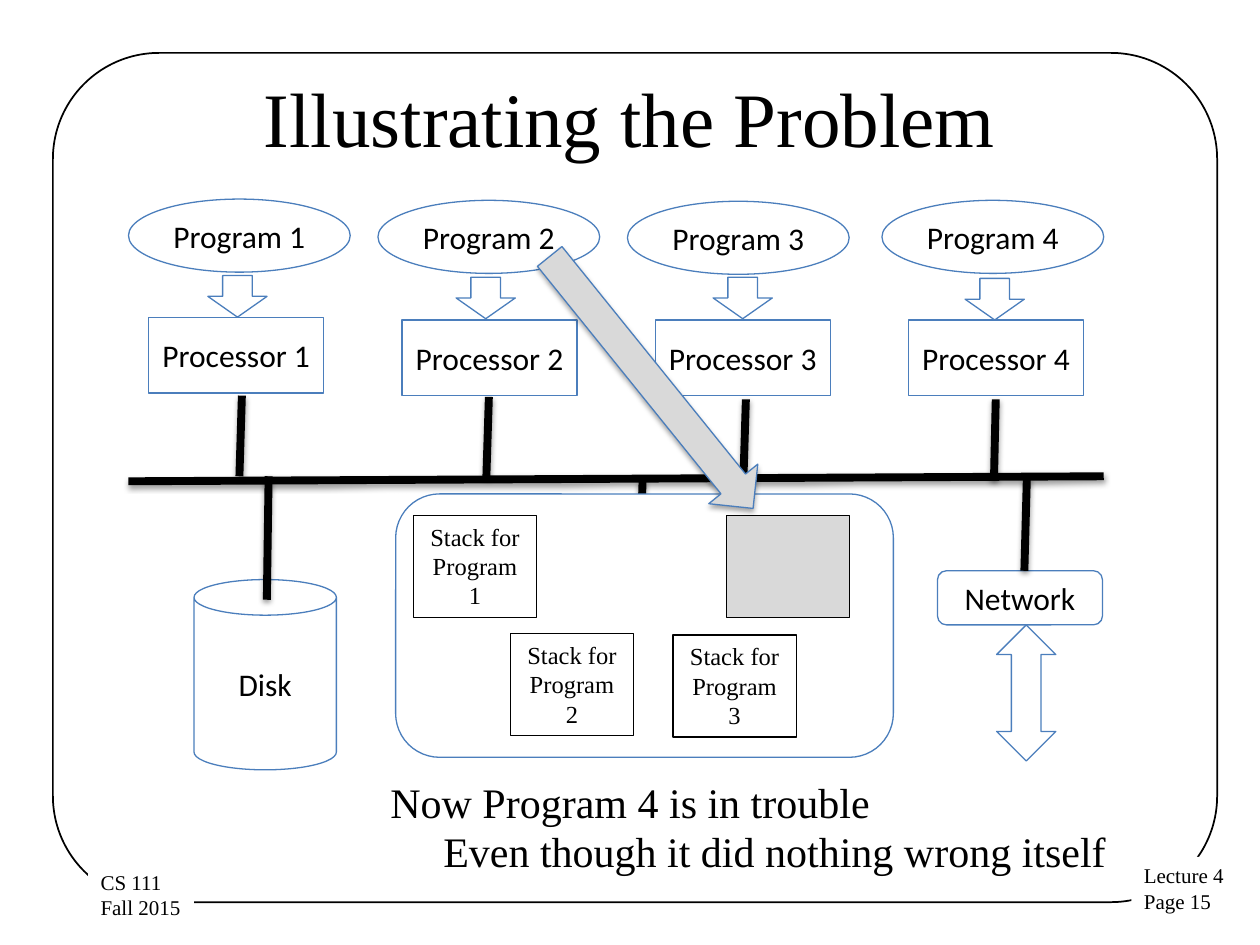
from dataclasses import dataclass

from lxml import etree
from pptx import Presentation
from pptx.dml.color import RGBColor
from pptx.enum.shapes import MSO_CONNECTOR, MSO_SHAPE
from pptx.enum.text import MSO_ANCHOR, PP_ALIGN
from pptx.oxml.ns import qn
from pptx.util import Pt

RECTANGLE = MSO_SHAPE.RECTANGLE
ROUNDED = MSO_SHAPE.ROUNDED_RECTANGLE
OVAL = MSO_SHAPE.OVAL
CAN = MSO_SHAPE.CAN
DOWN_ARROW = MSO_SHAPE.DOWN_ARROW
UP_DOWN_ARROW = MSO_SHAPE.UP_DOWN_ARROW
STRAIGHT = MSO_CONNECTOR.STRAIGHT
LEFT, CENTER = PP_ALIGN.LEFT, PP_ALIGN.CENTER
TOP, MIDDLE = MSO_ANCHOR.TOP, MSO_ANCHOR.MIDDLE

COLORS = {"ink": "000000", "paper": "FFFFFF", "outline": "4B7EBC", "intruder": "D9D9D9"}
SERIF, SANS = "Times New Roman", "Calibri"


@dataclass(frozen=True)
class Box:
    left: float
    top: float
    width: float
    height: float


@dataclass(frozen=True)
class TextStyle:
    font: str
    size: float
    align: PP_ALIGN = CENTER
    anchor: MSO_ANCHOR = MIDDLE
    wrap: bool = False


@dataclass(frozen=True)
class Column:
    program: tuple[float, float]
    arrow: tuple[float, float]
    processor_top: float


@dataclass(frozen=True)
class Wire:
    start: tuple[float, float]
    end: tuple[float, float]


LABEL = TextStyle(SANS, 18)
STACK = TextStyle(SERIF, 14, anchor=TOP, wrap=True)
TITLE = TextStyle(SERIF, 44, wrap=True)
CORNER = TextStyle(SERIF, 12, LEFT, TOP)
REMARK = TextStyle(SERIF, 24, LEFT, TOP)

COLUMNS = [
    Column((73.44, 113.76), (118.8, 157.5), 181.44),
    Column((216, 114.48), (260.64, 158.4), 182.88),
    Column((358.56, 115), (407.52, 158.4), 182.88),
    Column((504, 114.48), (551.52, 159.12), 182.88),
]
PROCESSOR_LEFT, PROCESSOR_STEP = 84.96, 144.72

WIRES = [
    Wire((73.44, 275.04), (630.72, 272.16)),
    Wire((136.8, 272.16), (138.24, 226.08)),
    Wire((277.92, 272.88), (279.36, 226.8)),
    Wire((424.8, 274.32), (426.24, 228.24)),
    Wire((568, 274.32), (569, 228.24)),
    Wire((365.76, 319.68), (367.2, 274.32)),
    Wire((152.5, 342.72), (153.5, 272.16)),
    Wire((585.36, 326.16), (586.8, 272.88)),
]

STACK_WIDTH, STACK_HEIGHT = 70.56, 58.32
STACKS = [(236.16, 294.48), (291.6, 362.16), (384.48, 362.88)]


def color(name: str) -> RGBColor:
    return RGBColor.from_string(COLORS[name])


def write(shape, lines: list[str], style: TextStyle) -> None:
    frame = shape.text_frame
    frame.word_wrap = style.wrap
    frame.vertical_anchor = style.anchor
    frame.text = "\n".join(lines)
    for para in frame.paragraphs:
        para.alignment = style.align
        para.font.name = style.font
        para.font.size = Pt(style.size)
        para.font.color.rgb = color("ink")


def add_text(page, box: Box, text: str, style: TextStyle) -> None:
    text_box = page.shapes.add_textbox(
        Pt(box.left), Pt(box.top), Pt(box.width), Pt(box.height))
    write(text_box, [text], style)


def add_block(page, kind, box: Box, fill: str | None = None,
              line: str | None = "outline", line_width: float = 0.75,
              lines: list[str] | None = None, style: TextStyle = LABEL):
    shape = page.shapes.add_shape(
        kind, Pt(box.left), Pt(box.top), Pt(box.width), Pt(box.height))
    shape.shadow.inherit = False
    if fill:
        shape.fill.solid()
        shape.fill.fore_color.rgb = color(fill)
    else:
        shape.fill.background()
    if line:
        shape.line.color.rgb = color(line)
        shape.line.width = Pt(line_width)
    else:
        shape.line.fill.background()
    if lines:
        write(shape, lines, style)
    return shape


def cast_shadow(shape, distance: float, opacity: int) -> None:
    properties = shape._element.spPr
    effects = properties.find(qn("a:effectLst"))
    if effects is None:
        effects = etree.SubElement(properties, qn("a:effectLst"))
    shadow = etree.SubElement(
        effects, qn("a:outerShdw"), blurRad=str(int(Pt(3.1))),
        dist=str(int(Pt(distance))), dir="5400000", rotWithShape="0")
    ink = etree.SubElement(shadow, qn("a:srgbClr"), val=COLORS["ink"])
    etree.SubElement(ink, qn("a:alpha"), val=str(opacity * 1000))


def add_wire(page, wire: Wire) -> None:
    connector = page.shapes.add_connector(
        STRAIGHT, *(Pt(value) for value in wire.start + wire.end))
    connector.line.color.rgb = color("ink")
    connector.line.width = Pt(4.5)
    cast_shadow(connector, 1.6, 38)


def add_column(page, index: int, column: Column) -> None:
    number = index + 1
    processor_left = PROCESSOR_LEFT + index * PROCESSOR_STEP
    add_block(page, RECTANGLE, Box(processor_left, column.processor_top, 100.08, 43.2),
              lines=[f"Processor {number}"])
    add_block(page, OVAL, Box(*column.program, 126.72, 41.76),
              lines=[f"Program {number}"])
    add_block(page, DOWN_ARROW, Box(*column.arrow, 33.84, 23.76), "paper")


def add_frame(page) -> None:
    frame = add_block(page, ROUNDED, Box(30.24, 30.24, 665.28, 485.28),
                      line="ink", line_width=1)
    frame.adjustments[0] = 0.125
    add_block(page, RECTANGLE, Box(646.56, 489.6, 61.2, 36.72), "paper", None,
              lines=["Lecture 4", "Page 15"], style=CORNER)
    add_block(page, RECTANGLE, Box(50.4, 493.2, 60.48, 36.72), "paper", None,
              lines=["CS 111", "Fall 2015"], style=CORNER)


def add_memory(page) -> None:
    add_block(page, ROUNDED, Box(226.08, 282.24, 284.4, 150.48), "paper")
    for number, (left, top) in enumerate(STACKS, start=1):
        add_block(page, RECTANGLE, Box(left, top, STACK_WIDTH, STACK_HEIGHT),
                  line="ink", lines=[f"Stack for Program {number}"], style=STACK)
    intrusion = add_block(page, DOWN_ARROW, Box(354.24, 126, 36, 185.04), "intruder")
    intrusion.rotation = 321.1
    cast_shadow(intrusion, 1.8, 35)
    add_block(page, RECTANGLE, Box(415.08, 294.48, STACK_WIDTH, STACK_HEIGHT),
              "intruder", "ink")


def main() -> None:
    deck = Presentation()
    deck.slide_width, deck.slide_height = Pt(720), Pt(540)
    page = deck.slides.add_slide(deck.slide_layouts[6])
    add_frame(page)
    add_text(page, Box(36, 21.6, 648, 90), "Illustrating the Problem", TITLE)
    for index, column in enumerate(COLUMNS):
        add_column(page, index, column)
    add_block(page, CAN, Box(110.88, 331.2, 81.36, 108.72), "paper", lines=["Disk"])
    add_block(page, ROUNDED, Box(535.68, 326.16, 94.32, 30.96), "paper",
              lines=["Network"])
    add_block(page, UP_DOWN_ARROW, Box(569.52, 357.12, 33.84, 77.76), "paper")
    for wire in WIRES:
        add_wire(page, wire)
    add_memory(page)
    add_text(page, Box(216, 439.92, 292.32, 36), "Now Program 4 is in trouble", REMARK)
    add_text(page, Box(246.24, 468, 400.32, 36),
             "Even though it did nothing wrong itself", REMARK)
    deck.save("out.pptx")


if __name__ == "__main__":
    main()
